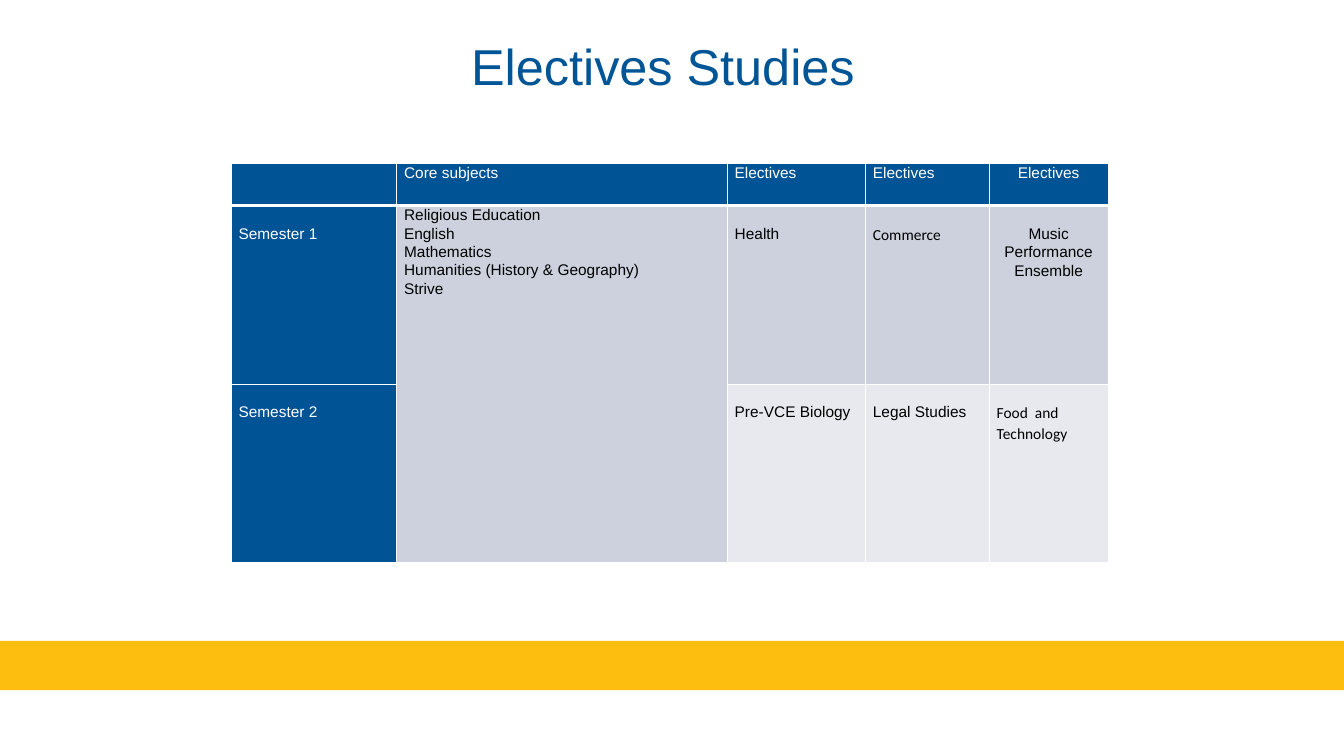
from dataclasses import dataclass

from lxml.etree import SubElement
from pptx import Presentation
from pptx.dml.color import RGBColor
from pptx.enum.shapes import MSO_SHAPE
from pptx.enum.text import MSO_ANCHOR, PP_ALIGN
from pptx.oxml.ns import qn
from pptx.slide import Slide
from pptx.table import _Cell
from pptx.util import Cm, Pt

BLUE = "005495"
TITLE_BLUE = "005596"
YELLOW = "FEBE10"
WHITE = "FFFFFF"
BLACK = "000000"
DARK_GREY = "CCD1DD"
LIGHT_GREY = "E7E9EF"

PAGE_WIDTH, PAGE_HEIGHT = 33.86, 19.05
COLUMN_WIDTHS = (4.17, 8.33, 3.48, 3.12, 3.0)
ROW_HEIGHTS = (1.07, 4.5, 4.5)
SIDE_MARGIN = 0.19
ONE_LINE = 0.47


@dataclass(frozen=True)
class Entry:
    lines: tuple[str, ...]
    fill: str
    color: str = BLACK
    font: str = "Arial"
    align: PP_ALIGN = PP_ALIGN.LEFT
    top: float = ONE_LINE


def heading(label: str, align: PP_ALIGN = PP_ALIGN.LEFT) -> Entry:
    return Entry((label,), BLUE, WHITE, align=align, top=0)


def semester(number: int) -> Entry:
    return Entry((f"Semester {number}",), BLUE, WHITE)


CORE_SUBJECTS = Entry(
    (
        "Religious Education",
        "English",
        "Mathematics",
        "Humanities (History & Geography)",
        "Strive",
    ),
    DARK_GREY,
    top=0,
)

TIMETABLE = (
    (
        heading(""),
        heading("Core subjects"),
        heading("Electives"),
        heading("Electives"),
        heading("Electives", PP_ALIGN.CENTER),
    ),
    (
        semester(1),
        CORE_SUBJECTS,
        Entry(("Health",), DARK_GREY),
        Entry(("Commerce",), DARK_GREY, font="Calibri"),
        Entry(("Music", "Performance Ensemble"), DARK_GREY, align=PP_ALIGN.CENTER),
    ),
    (
        semester(2),
        Entry((), DARK_GREY),
        Entry(("Pre-VCE Biology",), LIGHT_GREY),
        Entry(("Legal Studies",), LIGHT_GREY),
        Entry(("Food  and", "Technology"), LIGHT_GREY, font="Calibri"),
    ),
)


def rgb(value: str) -> RGBColor:
    return RGBColor.from_string(value)


def apply(target: object, values: dict[str, object]) -> None:
    for name, value in values.items():
        setattr(target, name, value)


def add_band(page: Slide) -> None:
    band = page.shapes.add_shape(
        MSO_SHAPE.RECTANGLE, Cm(0), Cm(16.15), Cm(PAGE_WIDTH), Cm(1.24)
    )
    band.shadow.inherit = False
    band.fill.solid()
    band.fill.fore_color.rgb = rgb(YELLOW)
    band.line.fill.background()


def format_title(page: Slide) -> None:
    title = page.shapes.title
    apply(title, {"left": Cm(8.3), "top": Cm(0.74), "width": Cm(16.81), "height": Cm(1.8)})
    frame = title.text_frame
    apply(frame, {"word_wrap": True, "vertical_anchor": MSO_ANCHOR.MIDDLE})
    para = frame.paragraphs[0]
    para.alignment = PP_ALIGN.CENTER
    span = para.add_run()
    span.text = "Electives Studies"
    apply(span.font, {"name": "Arial", "size": Pt(36)})
    span.font.color.rgb = rgb(TITLE_BLUE)


def set_borders(cell: _Cell, bottom: int) -> None:
    properties = cell._tc.get_or_add_tcPr()
    for side, width in (("L", 1), ("R", 1), ("T", 1), ("B", bottom)):
        border = SubElement(properties, qn(f"a:ln{side}"), w=str(Pt(width)))
        fill = SubElement(border, qn("a:solidFill"))
        SubElement(fill, qn("a:srgbClr"), val=WHITE)


def fill_cell(cell: _Cell, entry: Entry, bottom: int) -> None:
    set_borders(cell, bottom)
    cell.fill.solid()
    cell.fill.fore_color.rgb = rgb(entry.fill)
    apply(
        cell,
        {
            "margin_left": Cm(SIDE_MARGIN),
            "margin_right": Cm(SIDE_MARGIN),
            "margin_top": Cm(entry.top),
            "margin_bottom": Cm(0),
            "vertical_anchor": MSO_ANCHOR.TOP,
        },
    )
    frame = cell.text_frame
    for index, line in enumerate(entry.lines):
        para = frame.add_paragraph() if index else frame.paragraphs[0]
        apply(para, {"alignment": entry.align, "line_spacing": 1.07})
        apply(para.font, {"name": entry.font, "size": Pt(11), "bold": False})
        if line:
            span = para.add_run()
            span.text = line
            apply(span.font, {"name": entry.font, "size": Pt(11), "bold": False})
            span.font.color.rgb = rgb(entry.color)


def add_timetable(page: Slide) -> None:
    table = page.shapes.add_table(
        len(ROW_HEIGHTS),
        len(COLUMN_WIDTHS),
        Cm(5.82),
        Cm(4.11),
        Cm(sum(COLUMN_WIDTHS)),
        Cm(sum(ROW_HEIGHTS)),
    ).table
    for column, width in zip(table.columns, COLUMN_WIDTHS):
        column.width = Cm(width)
    for row, height in zip(table.rows, ROW_HEIGHTS):
        row.height = Cm(height)
    for row_index, entries in enumerate(TIMETABLE):
        for column_index, entry in enumerate(entries):
            bottom = 1 if row_index else 3
            fill_cell(table.cell(row_index, column_index), entry, bottom)
    table.cell(1, 1).merge(table.cell(2, 1))


def main() -> None:
    deck = Presentation()
    apply(deck, {"slide_width": Cm(PAGE_WIDTH), "slide_height": Cm(PAGE_HEIGHT)})
    page = deck.slides.add_slide(deck.slide_layouts.get_by_name("Title Only"))
    add_band(page)
    format_title(page)
    add_timetable(page)
    deck.save("out.pptx")


if __name__ == "__main__":
    main()
